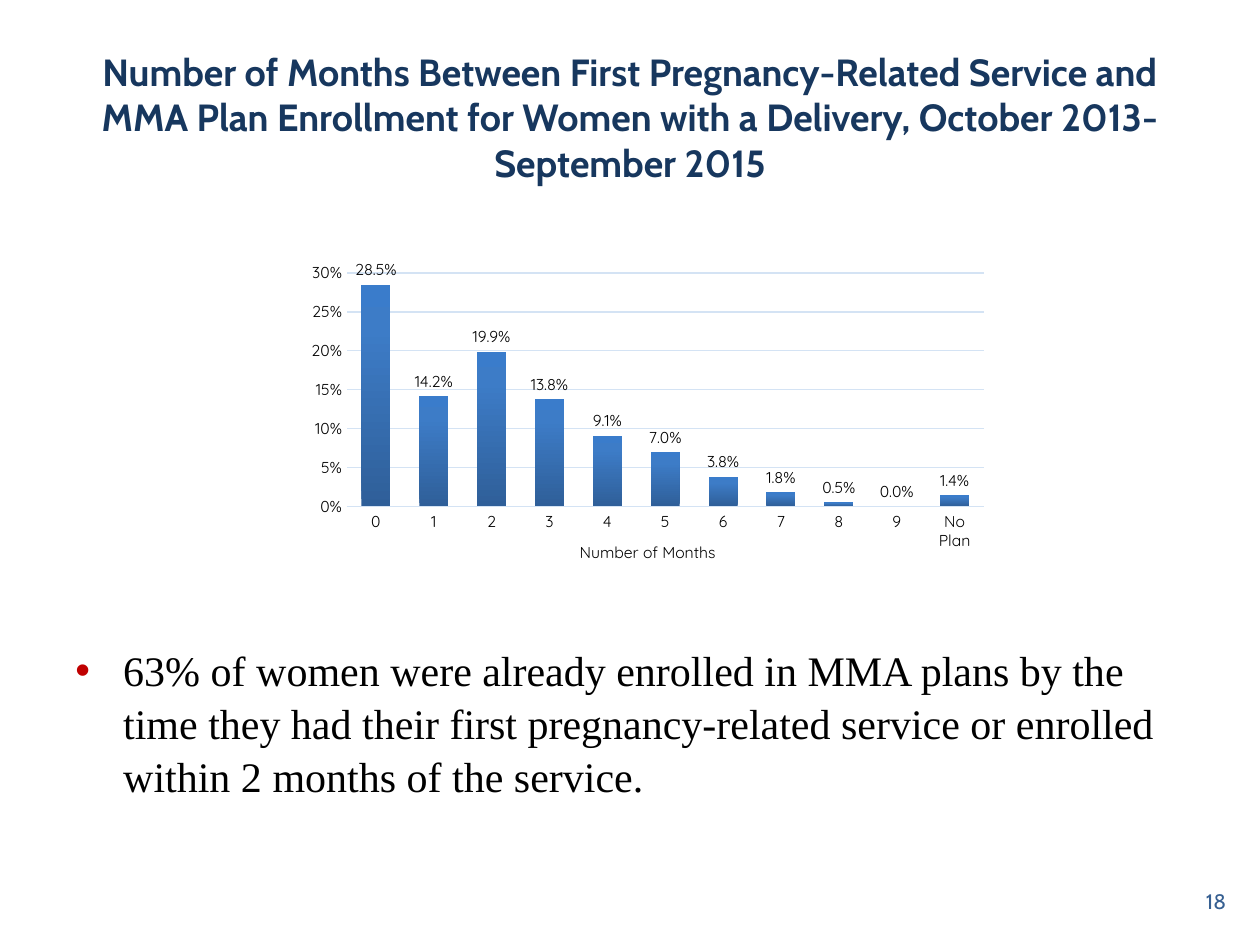
"""Build a slide with a column chart of months from first service to plan enrollment."""
import copy

import lxml.etree
import pptx
import pptx.chart.data
import pptx.dml.color
import pptx.enum.chart
import pptx.enum.text
import pptx.oxml
import pptx.oxml.ns
import pptx.util

Inches = pptx.util.Inches
Pt = pptx.util.Pt
Align = pptx.enum.text.PP_ALIGN
Anchor = pptx.enum.text.MSO_ANCHOR
qn = pptx.oxml.ns.qn


def color(value):
    return pptx.dml.color.RGBColor.from_string(value)


def style(font, size, name, value, bold=False):
    font.size = Pt(size)
    font.name = name
    font.color.rgb = color(value)
    font.bold = bold


deck = pptx.Presentation()
deck.slide_width = Inches(10)
deck.slide_height = Inches(7.5)
page = deck.slides.add_slide(deck.slide_layouts[6])

texts = [
    ("Number of Months Between First Pregnancy-Related Service and MMA Plan "
     "Enrollment for Women with a Delivery, October 2013-September 2015",
     (0.5, 0.3, 9, 1.25), Anchor.MIDDLE, Align.CENTER, (21.6, "Cabin", "17375E", True)),
    ("63% of women were already enrolled in MMA plans by the time they had their "
     "first pregnancy-related service or enrolled within 2 months of the service.",
     (0.5, 5.05, 9, 1.35), Anchor.TOP, Align.LEFT, (24, "Times New Roman", "000000")),
    ("18", (7.5, 6.95, 2.33, 0.4), Anchor.MIDDLE, Align.RIGHT, (12, "Cabin", "376092")),
]
for words, place, anchor, align, look in texts:
    box = page.shapes.add_textbox(*map(Inches, place))
    frame = box.text_frame
    frame.word_wrap = True
    frame.vertical_anchor = anchor
    para = frame.paragraphs[0]
    para.alignment = align
    if align == Align.LEFT:
        para.line_spacing = 1.05
        settings = para._p.get_or_add_pPr()
        settings.set("marL", str(Inches(0.38)))
        settings.set("indent", str(Inches(-0.38)))
        bullet_color = lxml.etree.SubElement(settings, qn("a:buClr"))
        lxml.etree.SubElement(bullet_color, qn("a:srgbClr"), val="C00000")
        lxml.etree.SubElement(settings, qn("a:buFont"), typeface="Arial")
        lxml.etree.SubElement(settings, qn("a:buChar"), char="•")
    span = para.add_run()
    span.text = words
    style(span.font, *look)

data = pptx.chart.data.CategoryChartData(number_format="0.0%")
data.categories = [str(month) for month in range(10)] + ["No Plan"]
data.add_series("Series 1", [0.285, 0.142, 0.199, 0.138, 0.091, 0.07, 0.038, 0.018, 0.005, 0, 0.014])
chart = page.shapes.add_chart(
    pptx.enum.chart.XL_CHART_TYPE.COLUMN_CLUSTERED,
    Inches(2.08), Inches(1.92), Inches(5.91), Inches(2.58), data).chart
chart.has_legend = False
chart.has_title = False
style(chart.font, 10, "Quicksand", "000000")

months = chart.category_axis
shares = chart.value_axis
for axis in (months, shares):
    axis.major_tick_mark = pptx.enum.chart.XL_TICK_MARK.NONE
    axis.minor_tick_mark = pptx.enum.chart.XL_TICK_MARK.NONE
    style(axis.tick_labels.font, 9, "Quicksand", "000000")
shares.minimum_scale = 0
shares.maximum_scale = 0.3
shares.major_unit = 0.05
shares.tick_labels.number_format = "0%"
shares.tick_labels.number_format_is_linked = False
shares.format.line.fill.background()
for line in (months.format.line, shares.major_gridlines.format.line):
    line.color.rgb = color("D4E3F4")
    line.width = Pt(0.75)
span = months.axis_title.text_frame.paragraphs[0].add_run()
span.text = "Number of Months"
style(span.font, 9, "Quicksand", "000000")

plot = chart.plots[0]
plot.gap_width = 100
plot.overlap = -24
plot.vary_by_categories = False
plot.has_data_labels = True
labels = plot.data_labels
labels.show_value = True
labels.number_format = "0.0%"
labels.number_format_is_linked = False
labels.position = pptx.enum.chart.XL_LABEL_POSITION.OUTSIDE_END
style(labels.font, 9, "Quicksand", "000000")

series = plot.series[0]
series.invert_if_negative = False
fill = series.format.fill
fill.gradient()
fill.gradient_angle = 90
stop_list = series._element.find(".//" + qn("a:gsLst"))
stop_list.append(copy.deepcopy(stop_list[-1]))
for stop, (position, value) in zip(
        fill.gradient_stops, [(0, "2F5F99"), (0.8, "3D7CC7"), (1, "3A7CCB")]):
    stop.position = position
    stop.color.rgb = color(value)

area = chart._chartSpace.chart.plotArea
for old in area.findall(qn("c:layout")):
    area.remove(old)
layout = lxml.etree.Element(qn("c:layout"))
area.insert(0, layout)
manual = lxml.etree.SubElement(layout, qn("c:manualLayout"))
for tag, value in [("layoutTarget", "inner"), ("xMode", "edge"), ("yMode", "edge"),
                   ("x", "0.114"), ("y", "0.096"), ("w", "0.855"), ("h", "0.718")]:
    lxml.etree.SubElement(manual, qn("c:" + tag), val=value)

deck.save("out.pptx")
